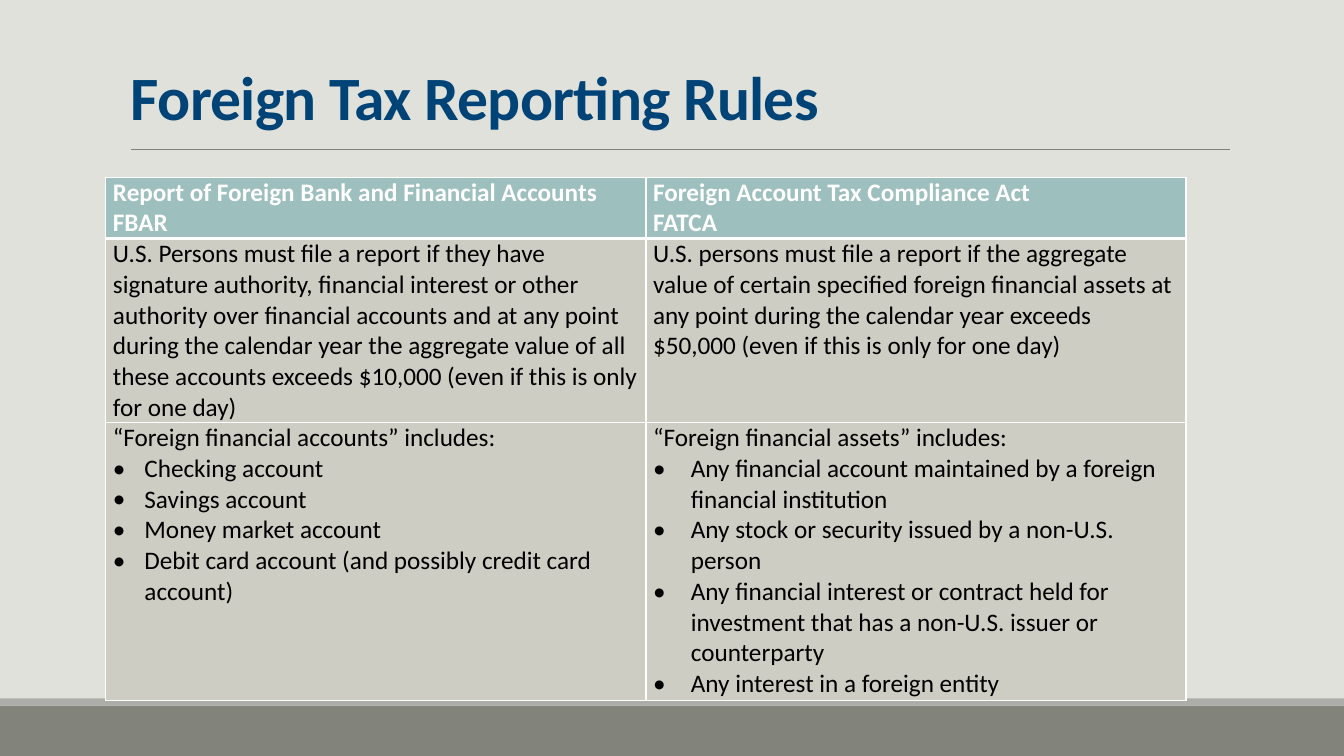
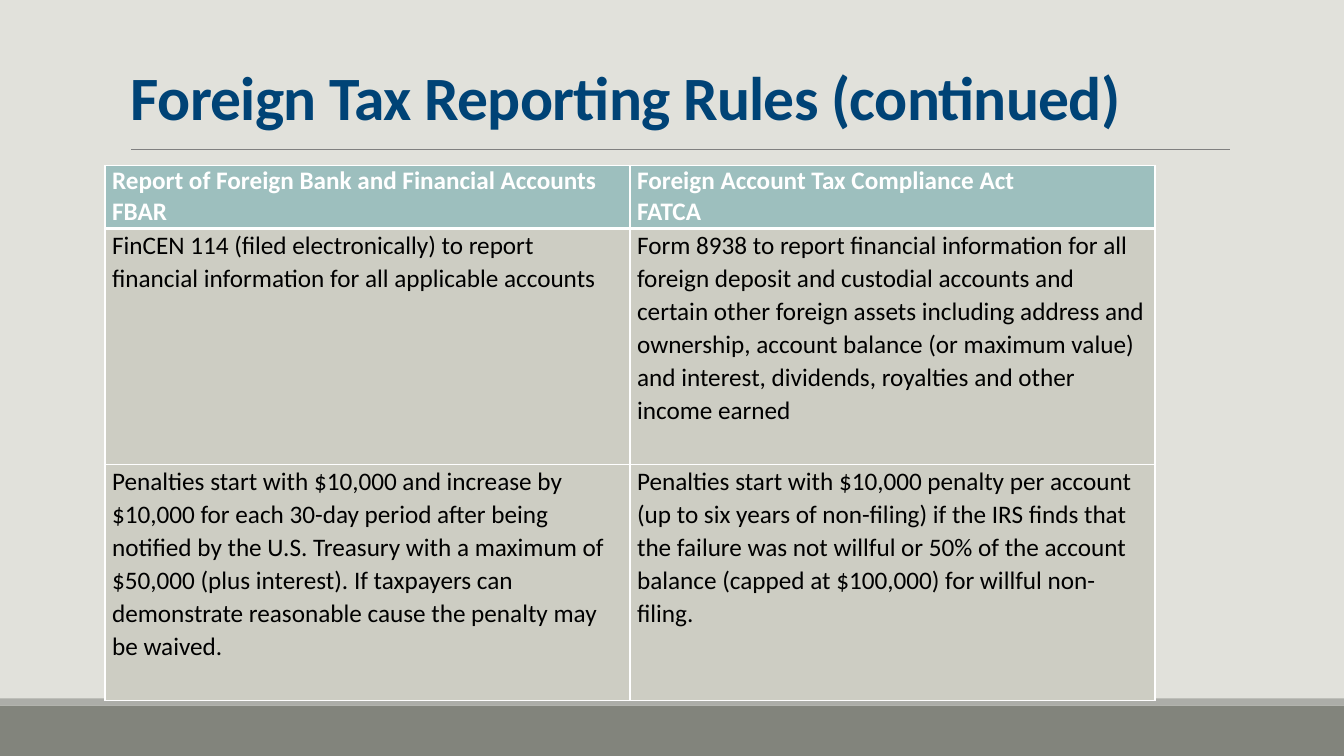
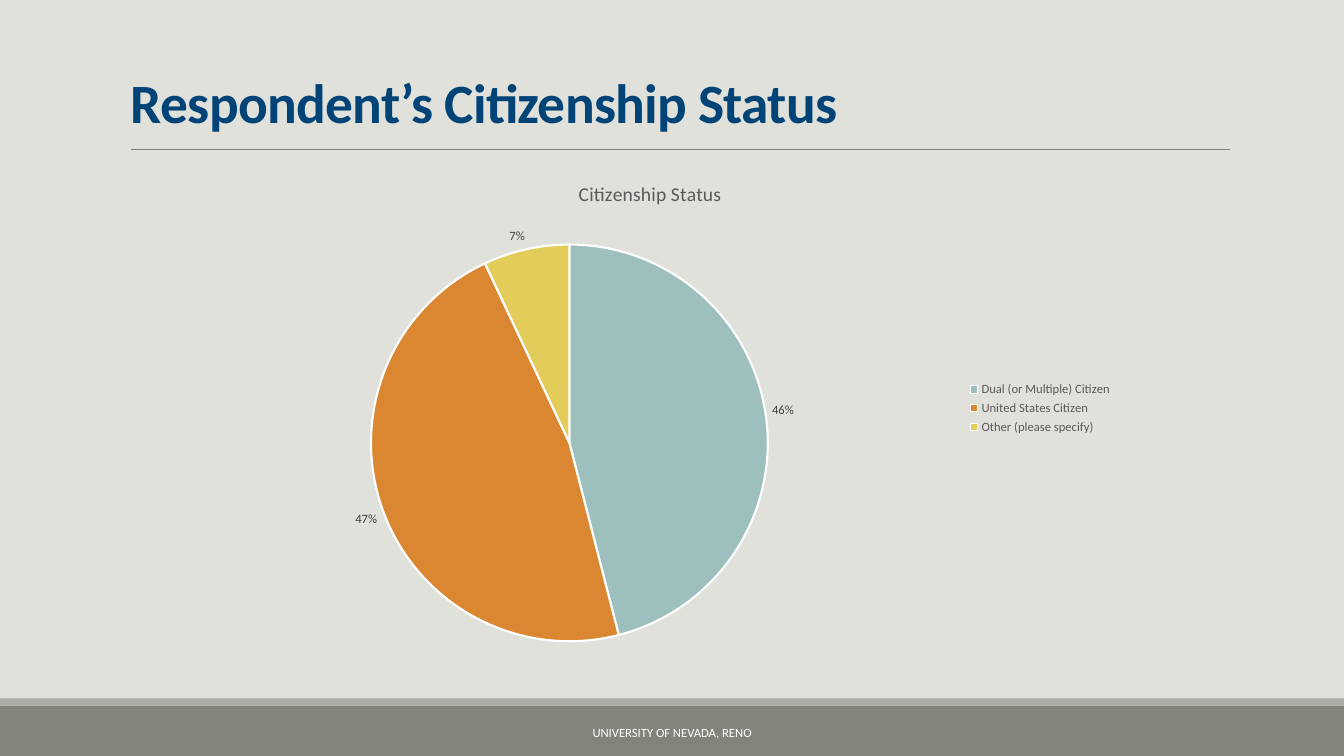
"""Build three slides on foreign tax reporting rules and respondents' citizenship."""
from lxml import etree
from pptx import Presentation
from pptx.chart.data import CategoryChartData
from pptx.enum.chart import XL_CHART_TYPE, XL_LABEL_POSITION, XL_LEGEND_POSITION
from pptx.enum.dml import MSO_FILL
from pptx.enum.shapes import MSO_CONNECTOR, MSO_SHAPE
from pptx.enum.text import MSO_ANCHOR, PP_ALIGN
from pptx.dml.color import RGBColor
from pptx.oxml.ns import qn
from pptx.util import Inches, Pt

PIE = XL_CHART_TYPE.PIE
OUTSIDE = XL_LABEL_POSITION.OUTSIDE_END
RIGHT = XL_LEGEND_POSITION.RIGHT
STRAIGHT = MSO_CONNECTOR.STRAIGHT
RECTANGLE = MSO_SHAPE.RECTANGLE
SOLID = MSO_FILL.SOLID
BOTTOM, MIDDLE = MSO_ANCHOR.BOTTOM, MSO_ANCHOR.MIDDLE
CENTER = PP_ALIGN.CENTER

COLUMNS, ROWS = 160, 90
UNIT = Inches(1) / 12
CELL_INSET = 0.85

PAPER, BAND, BAND_EDGE, RULE = "E1E1DB", "82847C", "ACADA8", "808080"
NAVY, WHITE, BLACK = "004376", "FFFFFF", "000000"
TEAL, ORANGE, YELLOW, STONE = "9DBFBE", "DB8631", "E3CC5A", "CDCDC3"
LEGEND_GRAY, LABEL_GRAY = "595959", "404040"

HEADER_FONT = {"name": "Calibri", "size": Pt(18), "bold": True}
BODY_FONT = {"name": "Calibri", "size": Pt(18), "bold": False}
SMALL_FONT = {"name": "Calibri", "size": Pt(9), "bold": False}

TITLES = [
    ("Foreign Tax Reporting Rules", 44, 132, 12.7),
    ("Foreign Tax Reporting Rules (continued)", 44, 132, 12.7),
    ("Respondent’s Citizenship Status", 39.6, 88.7, 13),
]

HEADER = [
    (["Report of Foreign Bank and Financial Accounts FBAR"], 0),
    (["Foreign Account Tax Compliance Act", "FATCA"], 0),
]

TABLES = [
    {
        "left": 12.6, "top": 21.1, "column": 64.3, "rows": [7.3, 21.9, 33.1], "spacing": 1.0,
        "body": [
            [
                (["U.S. Persons must file a report if they have signature authority, financial "
                  "interest or other authority over financial accounts and at any point during "
                  "the calendar year the aggregate value of all these accounts exceeds $10,000 "
                  "(even if this is only for one day)"], 0),
                (["U.S. persons must file a report if the aggregate value of certain specified "
                  "foreign financial assets at any point during the calendar year exceeds "
                  "$50,000 (even if this is only for one day)"], 0),
            ],
            [
                (["“Foreign financial accounts” includes:",
                  "Checking account",
                  "Savings account",
                  "Money market account",
                  "Debit card account (and possibly credit card account)"], 3.75),
                (["“Foreign financial assets” includes:",
                  "Any financial account maintained by a foreign financial institution",
                  "Any stock or security issued by a non-U.S. person",
                  "Any financial interest or contract held for investment that has a non-U.S. "
                  "issuer or counterparty",
                  "Any interest in a foreign entity"], 4.5),
            ],
        ],
    },
    {
        "left": 12.5, "top": 19.7, "column": 62.5, "rows": [7.5, 28.1, 28.1], "spacing": 1.07,
        "body": [
            [
                (["FinCEN 114 (filed electronically) to report financial information for all "
                  "applicable accounts"], 0),
                (["Form 8938 to report financial information for all foreign deposit and "
                  "custodial accounts and certain other foreign assets including address and "
                  "ownership, account balance (or maximum value) and interest, dividends, "
                  "royalties and other income earned"], 0),
            ],
            [
                (["Penalties start with $10,000 and increase by $10,000 for each 30-day period "
                  "after being notified by the U.S. Treasury with a maximum of $50,000 (plus "
                  "interest). If taxpayers can demonstrate reasonable cause the penalty may be "
                  "waived."], 0),
                (["Penalties start with $10,000 penalty per account (up to six years of "
                  "non-filing) if the IRS finds that the failure was not willful or 50% of the "
                  "account balance (capped at $100,000) for willful non-filing."], 0),
            ],
        ],
    },
]

CITIZENSHIP = [
    ("Dual (or Multiple) Citizen", 46, TEAL),
    ("United States Citizen", 47, ORANGE),
    ("Other (please specify)", 7, YELLOW),
]


def paint(fill, color):
    """Make a fill solid in the given hex colour."""
    if fill.type != SOLID:
        fill.solid()
    fill.fore_color.rgb = RGBColor.from_string(color)


def write(frame, lines, font, color, spacing=1.0, indent=0):
    """Write lines as paragraphs, bulleting those after the first if indented."""
    frame.word_wrap = True
    for index, line in enumerate(lines):
        para = frame.paragraphs[0] if index == 0 else frame.add_paragraph()
        if indent and index:
            properties = para._p.get_or_add_pPr()
            properties.set("marL", str(round(indent * UNIT)))
            properties.set("indent", str(round(-indent * UNIT)))
            etree.SubElement(properties, qn("a:buFont"), typeface="Calibri")
            etree.SubElement(properties, qn("a:buChar"), char="•")
        para.line_spacing = spacing
        span = para.add_run()
        span.text = line
        for name, value in font.items():
            setattr(span.font, name, value)
        paint(span.font.fill, color)


deck = Presentation()
deck.slide_width, deck.slide_height = round(COLUMNS * UNIT), round(ROWS * UNIT)
paint(deck.slide_master.background.fill, PAPER)

pages = []
for title, size, width, height in TITLES:
    page = deck.slides.add_slide(deck.slide_layouts[6])
    pages.append(page)
    for top, depth, color in [(84, 6, BAND), (83.15, 0.85, BAND_EDGE)]:
        band = page.shapes.add_shape(
            RECTANGLE, 0, round(top * UNIT), deck.slide_width, round(depth * UNIT))
        band.shadow.inherit = False
        band.line.fill.background()
        paint(band.fill, color)
    rule = page.shapes.add_connector(
        STRAIGHT, *(round(place * UNIT) for place in (15.6, 17.75, 146.4, 17.75)))
    rule.line.width = Pt(0.5)
    paint(rule.line.fill, RULE)
    etree.SubElement(rule._element.spPr, qn("a:effectLst"))
    box = page.shapes.add_textbox(
        *(round(length * UNIT) for length in (14.4, 3.7, width, height)))
    box.text_frame.vertical_anchor = BOTTOM
    title_font = {"name": "Calibri", "size": Pt(size), "bold": True}
    write(box.text_frame, [title], title_font, NAVY, 0.85)
    box.text_frame.paragraphs[0].runs[0]._r.get_or_add_rPr().set("spc", "-50")

for page, layout in zip(pages, TABLES):
    content = [HEADER] + layout["body"]
    table = page.shapes.add_table(
        len(content), len(HEADER), round(layout["left"] * UNIT), round(layout["top"] * UNIT),
        round(len(HEADER) * layout["column"] * UNIT), round(sum(layout["rows"]) * UNIT)).table
    for column in table.columns:
        column.width = round(layout["column"] * UNIT)
    for row_index, cells in enumerate(content):
        table.rows[row_index].height = round(layout["rows"][row_index] * UNIT)
        is_header = row_index == 0
        for column_index, (lines, indent) in enumerate(cells):
            cell = table.cell(row_index, column_index)
            margins = {"margin_left": CELL_INSET, "margin_right": CELL_INSET,
                       "margin_top": 0, "margin_bottom": 0}
            for name, value in margins.items():
                setattr(cell, name, round(value * UNIT))
            borders = {"a:lnL": 1, "a:lnR": 1, "a:lnT": 3 if row_index == 1 else 1,
                       "a:lnB": 3 if is_header else 1}
            for tag, points in borders.items():
                edge = etree.SubElement(cell._tc.get_or_add_tcPr(), qn(tag), w=str(Pt(points)))
                solid = etree.SubElement(edge, qn("a:solidFill"))
                etree.SubElement(solid, qn("a:srgbClr"), val=WHITE)
            paint(cell.fill, TEAL if is_header else STONE)
            write(cell.text_frame, lines, HEADER_FONT if is_header else BODY_FONT,
                  WHITE if is_header else BLACK, 1.0 if is_header else layout["spacing"], indent)

page = pages[-1]
footer = page.shapes.add_textbox(
    *(round(length * UNIT) for length in (48.4, 84.75, 63.2, 4.8)))
footer.text_frame.vertical_anchor = MIDDLE
write(footer.text_frame, ["UNIVERSITY OF NEVADA, RENO"], SMALL_FONT, WHITE)
footer.text_frame.paragraphs[0].alignment = CENTER

data = CategoryChartData()
data.categories = [name for name, value, color in CITIZENSHIP]
data.add_series("Series 1", [value for name, value, color in CITIZENSHIP])
chart = page.shapes.add_chart(
    PIE, *(round(length * UNIT) for length in (21.2, 19.2, 112.4, 58.8)), data).chart
chart.font.name, chart.font.size = "Calibri", Pt(10)
chart.has_title = True
chart_title_font = {"name": "Calibri", "size": Pt(14), "bold": False}
write(chart.chart_title.text_frame, ["Citizenship Status"], chart_title_font, LEGEND_GRAY)
chart.has_legend = True
chart.legend.position = RIGHT
chart.legend.include_in_layout = False

plot = chart.plots[0]
plot.vary_by_categories = True
plot.has_data_labels = True
labels = plot.data_labels
label_format = {"show_percentage": True, "show_value": False, "position": OUTSIDE,
                "number_format": "0%", "number_format_is_linked": False}
for name, value in label_format.items():
    setattr(labels, name, value)
for font, color in [(chart.legend.font, LEGEND_GRAY), (labels.font, LABEL_GRAY)]:
    for name, value in SMALL_FONT.items():
        setattr(font, name, value)
    paint(font.fill, color)
for index, (name, value, color) in enumerate(CITIZENSHIP):
    wedge = plot.series[0].points[index].format
    paint(wedge.fill, color)
    paint(wedge.line.fill, WHITE)
    wedge.line.width = Pt(1.5)

deck.save("out.pptx")
